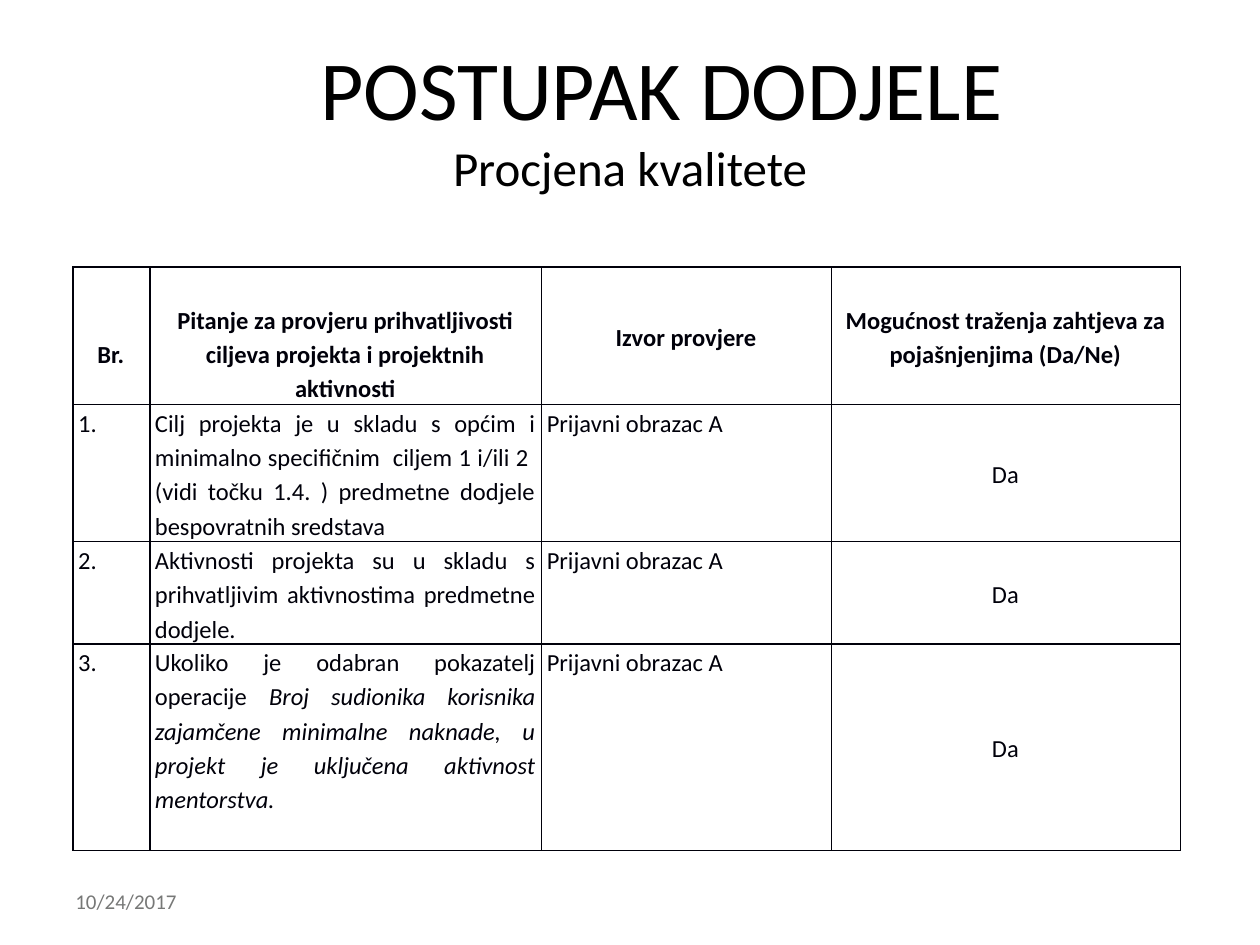
from dataclasses import dataclass

from lxml.etree import SubElement
from pptx import Presentation
from pptx.dml.color import RGBColor
from pptx.enum.text import MSO_ANCHOR, PP_ALIGN
from pptx.oxml.ns import qn
from pptx.util import Inches, Pt


@dataclass(frozen=True)
class Theme:
    font: str = "Calibri"
    title_color: str = "000000"
    table_color: str = "00000A"
    date_color: str = "777877"
    paper: str = "FFFFFF"
    title_size: int = 48
    subtitle_size: int = 28
    table_size: int = 14
    date_size: int = 12
    border_width: int = 1
    line_spacing: float = 1.15


class SlideBuilder:
    """Draws elements on one slide in the style of a theme."""

    def __init__(self, slide, theme):
        self.slide = slide
        self.theme = theme

    def run(self, paragraph, text, size, color, bold=False, italic=False):
        run = paragraph.add_run()
        run.text = text
        font = run.font
        font.name, font.size = self.theme.font, Pt(size)
        font.bold, font.italic = bold, italic
        font.color.rgb = RGBColor.from_string(color)

    def title(self, heading, subtitle, left, top, width, height):
        title = self.slide.shapes.title
        title.left, title.top = Inches(left), Inches(top)
        title.width, title.height = Inches(width), Inches(height)
        title.text_frame.vertical_anchor = MSO_ANCHOR.MIDDLE
        paragraph = title.text_frame.paragraphs[0]
        paragraph.alignment = PP_ALIGN.CENTER
        theme = self.theme
        self.run(paragraph, heading, theme.title_size, theme.title_color)
        paragraph.add_line_break()
        self.run(paragraph, subtitle, theme.subtitle_size, theme.title_color)

    def date(self, text, left, top, width, height):
        box = self.slide.shapes.add_textbox(
            Inches(left), Inches(top), Inches(width), Inches(height))
        frame = box.text_frame
        frame.word_wrap = True
        frame.vertical_anchor = MSO_ANCHOR.MIDDLE
        self.run(frame.paragraphs[0], text, self.theme.date_size, self.theme.date_color)

    def table(self, left, top, column_widths, row_heights):
        table = self.slide.shapes.add_table(
            len(row_heights), len(column_widths), Inches(left), Inches(top),
            Inches(sum(column_widths)), Inches(sum(row_heights))).table
        table.first_row = table.horz_banding = False
        for column, width in zip(table.columns, column_widths):
            column.width = Inches(width)
        for row, height in zip(table.rows, row_heights):
            row.height = Inches(height)
        return table

    def cell(self, cell, parts, align, anchor, bold=False, top_margin=0):
        """Fill a cell with runs given as (text, italic) pairs."""
        cell.margin_left, cell.margin_right = Inches(0.04), Inches(0.05)
        cell.margin_top, cell.margin_bottom = Inches(top_margin), 0
        cell.vertical_anchor = anchor
        self.borders(cell)
        cell.fill.solid()
        cell.fill.fore_color.rgb = RGBColor.from_string(self.theme.paper)
        paragraph = cell.text_frame.paragraphs[0]
        paragraph.alignment = align
        paragraph.line_spacing = self.theme.line_spacing
        for text, italic in parts:
            self.run(paragraph, text, self.theme.table_size,
                     self.theme.table_color, bold, italic)

    def borders(self, cell):
        properties = cell._tc.get_or_add_tcPr()
        for side in ("a:lnL", "a:lnR", "a:lnT", "a:lnB"):
            line = SubElement(properties, qn(side), w=str(Pt(self.theme.border_width)))
            fill = SubElement(line, qn("a:solidFill"))
            SubElement(fill, qn("a:srgbClr"), val=self.theme.table_color)


# Each heading comes with the top margin that lowers it in its cell.
HEADINGS = [
    ("Br.", 0.27),
    ("Pitanje za provjeru prihvatljivosti ciljeva projekta i projektnih aktivnosti", 0.27),
    ("Izvor provjere", 0),
    ("Mogućnost traženja zahtjeva za pojašnjenjima (Da/Ne)", 0),
]
QUESTIONS = [
    [("Cilj projekta je u skladu s općim i minimalno specifičnim  ciljem 1 i/ili 2  "
      "(vidi točku 1.4. ) predmetne dodjele bespovratnih sredstava", False)],
    [("Aktivnosti projekta su u skladu s prihvatljivim aktivnostima predmetne dodjele.",
      False)],
    [("Ukoliko je odabran pokazatelj operacije ", False),
     ("Broj sudionika korisnika zajamčene minimalne naknade, u projekt je uključena "
      "aktivnost mentorstva.", True)],
]
SOURCE = "Prijavni obrazac A"
CLARIFICATION = "Da"
ANSWER_STYLES = [
    (PP_ALIGN.LEFT, MSO_ANCHOR.TOP),
    (PP_ALIGN.JUSTIFY, MSO_ANCHOR.TOP),
    (PP_ALIGN.LEFT, MSO_ANCHOR.TOP),
    (PP_ALIGN.CENTER, MSO_ANCHOR.MIDDLE),
]


def main():
    presentation = Presentation()
    presentation.slide_width, presentation.slide_height = Inches(10), Inches(7.5)
    title_only = presentation.slide_layouts[5]
    builder = SlideBuilder(presentation.slides.add_slide(title_only), Theme())

    builder.date("10/24/2017", 0.5, 6.95, 2.33, 0.4)
    builder.title("\tPOSTUPAK DODJELE", "Procjena kvalitete", 0.5, 0.3, 9, 1.25)

    criteria = builder.table(0.58, 2.12, [0.61, 3.11, 2.3, 2.77], [1.09, 1.09, 0.81, 1.64])
    for column, (heading, top_margin) in enumerate(HEADINGS):
        builder.cell(criteria.cell(0, column), [(heading, False)], PP_ALIGN.CENTER,
                     MSO_ANCHOR.MIDDLE, bold=True, top_margin=top_margin)
    for number, question in enumerate(QUESTIONS, start=1):
        answers = [[(f"{number}.", False)], question,
                   [(SOURCE, False)], [(CLARIFICATION, False)]]
        for column, (parts, style) in enumerate(zip(answers, ANSWER_STYLES)):
            builder.cell(criteria.cell(number, column), parts, *style)

    presentation.save("out.pptx")


if __name__ == "__main__":
    main()
